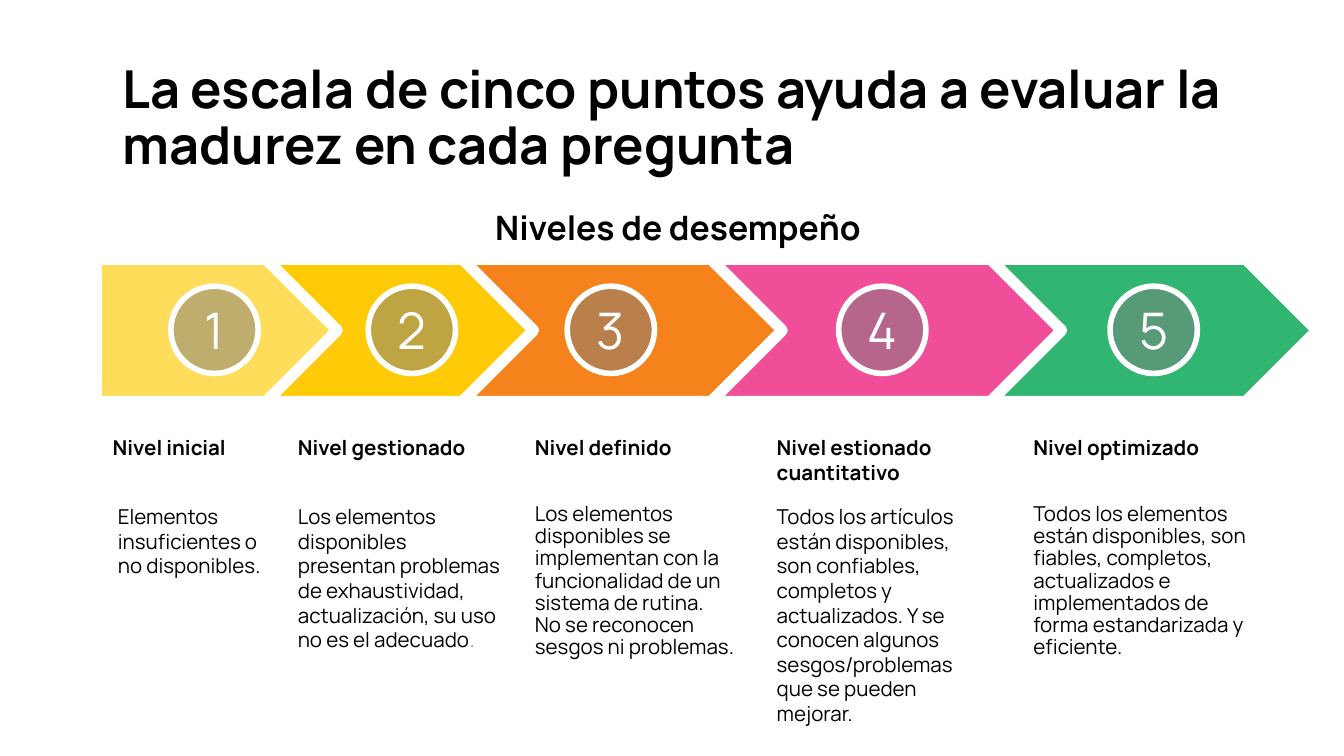
"""Build the slide that explains the five-point maturity scale."""
import collections

import lxml.etree
import pptx
import pptx.dml.color
import pptx.enum.shapes
import pptx.enum.text
import pptx.oxml.ns
import pptx.util

Cm = pptx.util.Cm
Pt = pptx.util.Pt
RGBColor = pptx.dml.color.RGBColor
MSO_SHAPE = pptx.enum.shapes.MSO_SHAPE
PP_ALIGN = pptx.enum.text.PP_ALIGN
MSO_ANCHOR = pptx.enum.text.MSO_ANCHOR
MSO_AUTO_SIZE = pptx.enum.text.MSO_AUTO_SIZE

FONT = "Manrope"
BLACK = RGBColor(0x00, 0x00, 0x00)
WHITE = RGBColor(0xFF, 0xFF, 0xFF)
GRAY = RGBColor(0x7F, 0x7F, 0x7F)
LIGHT_GRAY = RGBColor(0x99, 0x99, 0x99)
AMBER = RGBColor(0xFF, 0xCB, 0x03)
YELLOW = RGBColor(0xFF, 0xCB, 0x07)
ORANGE = RGBColor(0xF5, 0x82, 0x1A)
PINK = RGBColor(0xF0, 0x4E, 0x98)
GREEN = RGBColor(0x30, 0xB6, 0x71)

BAND_TOP, BAND_HEIGHT = 4.9, 2.69
CIRCLE_TOP, CIRCLE_SIZE = 5.41, 1.65
HEADING_TOP, BODY_TOP = 8.1, 9.4

Step = collections.namedtuple("Step", "kind left width color opacity circle_left")
Level = collections.namedtuple(
    "Level", "heading heading_box body body_box line_spacing"
)

STEPS = [
    Step(MSO_SHAPE.RECTANGLE, 1.83, 8.08, AMBER, 65, 3.23),
    Step(MSO_SHAPE.CHEVRON, 5.03, 7.39, YELLOW, 100, 6.96),
    Step(MSO_SHAPE.CHEVRON, 8.74, 6.12, ORANGE, 100, 10.72),
    Step(MSO_SHAPE.CHEVRON, 13.44, 6.76, PINK, 100, 15.85),
    Step(MSO_SHAPE.CHEVRON, 18.72, 6.17, GREEN, 100, 20.98),
]

LEVELS = [
    Level(
        "Nivel inicial", (1.88, HEADING_TOP, 3.3, 0.74),
        ["Elementos insuficientes o no disponibles."],
        (1.98, BODY_TOP, 3.4, 2.13), 1.0,
    ),
    Level(
        "Nivel gestionado", (5.38, HEADING_TOP, 4.34, 0.74),
        ["Los elementos disponibles presentan problemas de exhaustividad, "
         "actualización, su uso no es el adecuado"],
        (5.38, BODY_TOP, 4.34, 4.01), 1.0,
    ),
    Level(
        "Nivel definido", (9.86, HEADING_TOP, 3.94, 0.74),
        ["Los elementos disponibles se implementan con la funcionalidad de un "
         "sistema de rutina.",
         "No se reconocen sesgos ni problemas."],
        (9.86, BODY_TOP, 4.57, 4.11), 0.9,
    ),
    Level(
        "Nivel estionado cuantitativo", (14.43, HEADING_TOP, 4.11, 1.19),
        ["Todos los artículos están disponibles, son confiables, completos y "
         "actualizados. Y se conocen algunos sesgos/problemas que se pueden "
         "mejorar."],
        (14.43, BODY_TOP, 4.27, 4.5), 1.0,
    ),
    Level(
        "Nivel optimizado", (19.28, HEADING_TOP, 3.96, 0.74),
        ["Todos los elementos están disponibles, son fiables, completos, "
         "actualizados e implementados de forma estandarizada y eficiente."],
        (19.28, BODY_TOP, 4.8, 3.68), 0.9,
    ),
]


def format_run(run, size, color, bold=False):
    """Set the typeface, size, colour and weight of a run."""
    run.font.name = FONT
    run.font.size = Pt(size)
    run.font.bold = bold
    run.font.color.rgb = color


def write_text(text_frame, texts, size, color=BLACK, bold=False,
               alignment=PP_ALIGN.LEFT, line_spacing=1.0):
    """Fill a text frame with one paragraph for each text."""
    text_frame.word_wrap = True
    text_frame.text = "\n".join(texts)
    for paragraph in text_frame.paragraphs:
        paragraph.alignment = alignment
        paragraph.line_spacing = line_spacing
        for run in paragraph.runs:
            format_run(run, size, color, bold)


def set_margins(text_frame, horizontal, vertical):
    """Set equal side margins and equal top and bottom margins."""
    text_frame.margin_left = text_frame.margin_right = Cm(horizontal)
    text_frame.margin_top = text_frame.margin_bottom = Cm(vertical)


def add_outlined_shape(slide, kind, box, color, opacity, line_width):
    """Add a filled shape with a white outline."""
    shape = slide.shapes.add_shape(kind, *map(Cm, box))
    shape.shadow.inherit = False
    shape.fill.solid()
    shape.fill.fore_color.rgb = color
    shape.line.color.rgb = WHITE
    shape.line.width = Pt(line_width)
    if opacity < 100:
        color_element = shape.fill._xPr.find(".//" + pptx.oxml.ns.qn("a:srgbClr"))
        alpha = lxml.etree.SubElement(color_element, pptx.oxml.ns.qn("a:alpha"))
        alpha.set("val", str(opacity * 1000))
    return shape


def add_number(slide, number, left):
    """Add a translucent circle that holds the number of a level."""
    box = (left, CIRCLE_TOP, CIRCLE_SIZE, CIRCLE_SIZE)
    circle = add_outlined_shape(slide, MSO_SHAPE.OVAL, box, GRAY, 50, 3)
    set_margins(circle.text_frame, 0.25, 0.25)
    circle.text_frame.vertical_anchor = MSO_ANCHOR.MIDDLE
    write_text(circle.text_frame, [str(number)], 27, WHITE,
               alignment=PP_ALIGN.CENTER)


def add_text(slide, box, texts, size, **style):
    """Add a text box that grows with its text and return its frame."""
    text_frame = slide.shapes.add_textbox(*map(Cm, box)).text_frame
    write_text(text_frame, texts, size, **style)
    text_frame.auto_size = MSO_AUTO_SIZE.SHAPE_TO_FIT_TEXT
    return text_frame


def set_title(slide, text):
    """Place and format the title placeholder."""
    title = slide.shapes.title
    title.left, title.top, title.width, title.height = map(
        Cm, (2.13, 1.19, 22.48, 2.13)
    )
    set_margins(title.text_frame, 0.18, 0.1)
    title.text_frame.vertical_anchor = MSO_ANCHOR.MIDDLE
    title.text_frame.auto_size = MSO_AUTO_SIZE.NONE
    write_text(title.text_frame, [text], 28, bold=True, line_spacing=0.9)


def main():
    """Build and save the presentation."""
    presentation = pptx.Presentation()
    presentation.slide_width = Cm(25.4)
    presentation.slide_height = Cm(14.29)
    slide = presentation.slides.add_slide(presentation.slide_layouts[5])

    set_title(slide, "La escala de cinco puntos ayuda a evaluar la madurez "
                     "en cada pregunta")
    add_text(slide, (5.18, 3.78, 15.27, 1.02), ["Niveles de desempeño"], 18,
             bold=True, alignment=PP_ALIGN.CENTER)
    for step in STEPS:
        box = (step.left, BAND_TOP, step.width, BAND_HEIGHT)
        add_outlined_shape(slide, step.kind, box, step.color, step.opacity, 6)
    for number, step in enumerate(STEPS, start=1):
        add_number(slide, number, step.circle_left)

    bodies = []
    for level in LEVELS:
        add_text(slide, level.heading_box, [level.heading], 11, bold=True)
        bodies.append(add_text(slide, level.body_box, level.body, 11,
                               line_spacing=level.line_spacing))
    full_stop = bodies[1].paragraphs[0].add_run()
    full_stop.text = "."
    format_run(full_stop, 11, LIGHT_GRAY)

    presentation.save("out.pptx")


if __name__ == "__main__":
    main()
